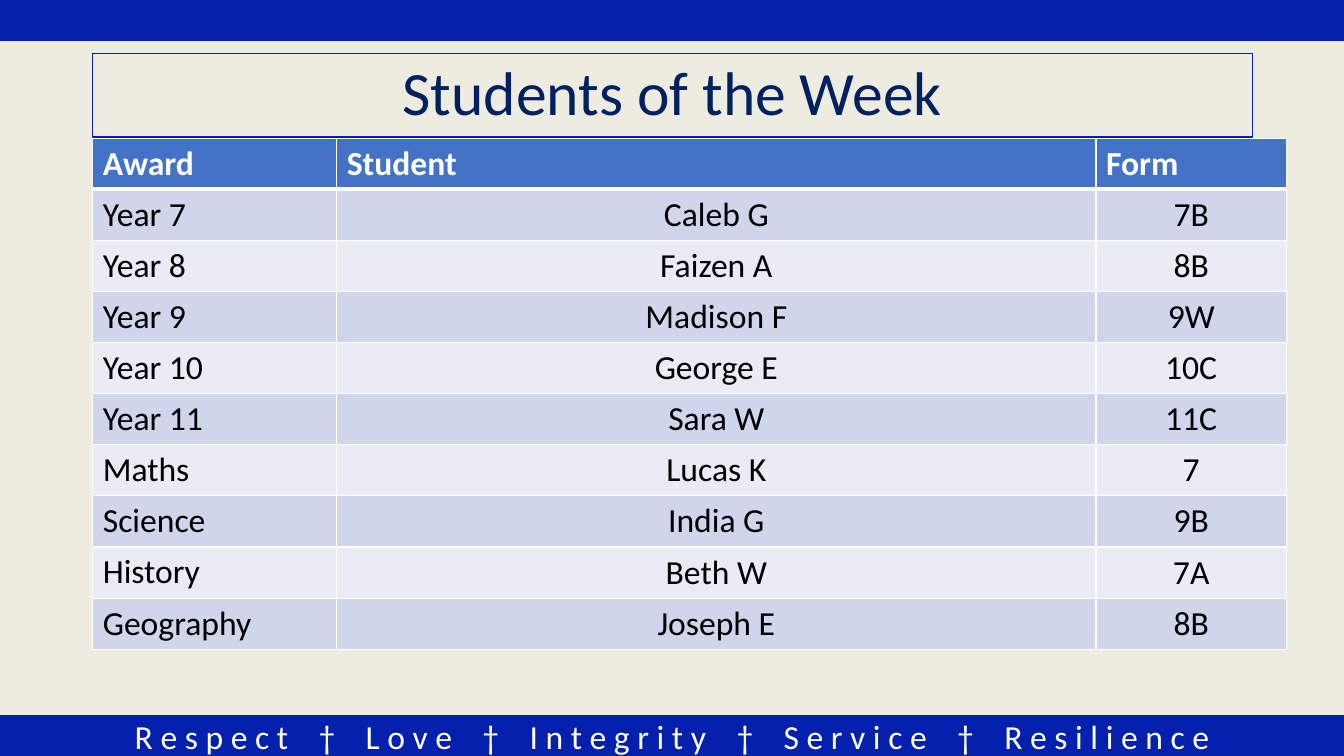
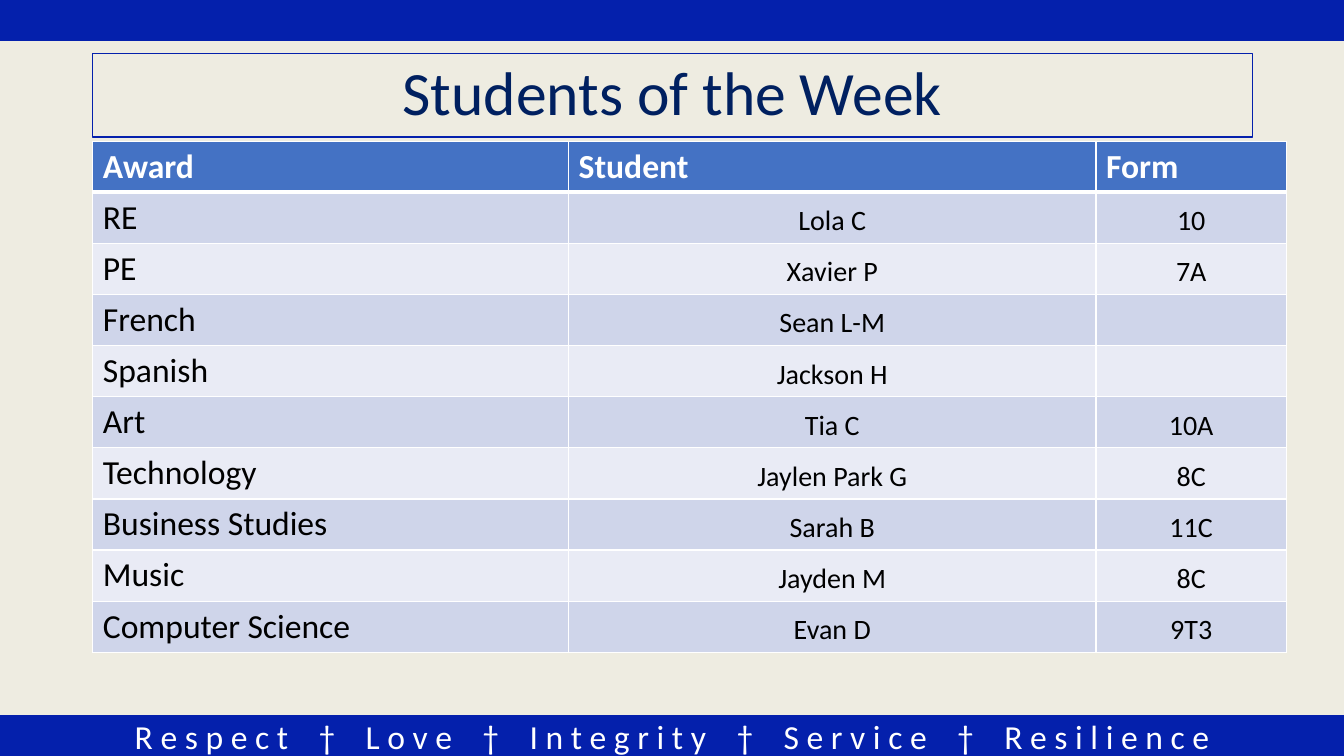
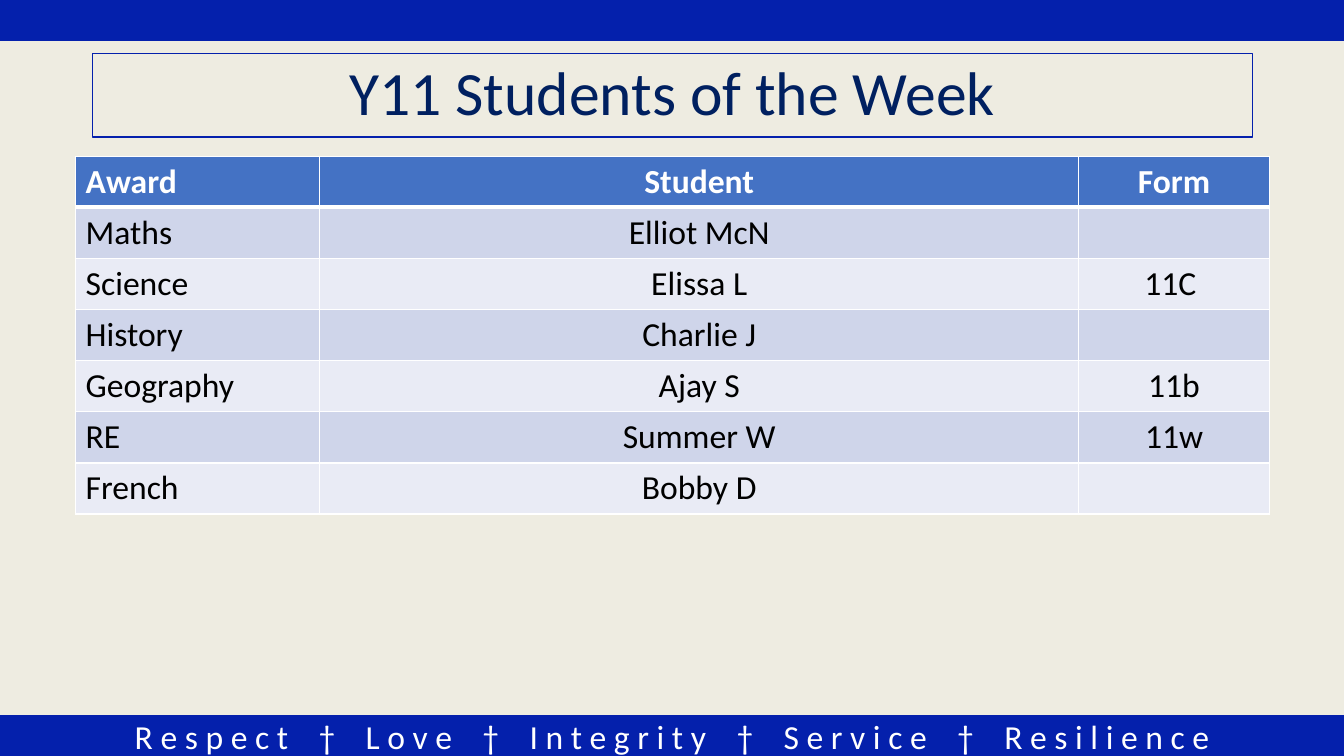
from pptx import Presentation
from pptx.dml.color import RGBColor
from pptx.enum.shapes import MSO_SHAPE
from pptx.enum.text import MSO_ANCHOR, PP_ALIGN
from pptx.oxml.ns import qn
from pptx.util import Inches, Pt
from lxml.etree import SubElement

WIDE, HIGH, BAND = 13.33, 7.5, 0.4
ROW = 0.5
BLUE, NAVY, CREAM = "0420AC", "002060", "EEECE1"
HEAD, STRIPES = "4472C4", ("E9EBF5", "CFD5EA")
WHITE, BLACK = "FFFFFF", "000000"
VALUES = ("Respect", "Love", "Integrity", "Service", "Resilience")
GAP = 16.25  # extra points on each side of a dagger

TITLE = {"size": Pt(44), "name": "Calibri"}
TEXT = {"size": Pt(24), "name": "Calibri", "bold": False}
SMALL = TEXT | {"size": Pt(20)}
BOLD = TEXT | {"bold": True}
INSET = {
    "vertical_anchor": MSO_ANCHOR.BOTTOM,
    "margin_left": Inches(0.01),
    "margin_top": Inches(0.01),
    "margin_right": Inches(0.01),
    "margin_bottom": Inches(0.05),
}

WEEK = "Students of the Week"
AWARDS = (
    ("Year 7", "Caleb G", "7B"),
    ("Year 8", "Faizen A", "8B"),
    ("Year 9", "Madison F", "9W"),
    ("Year 10", "George E", "10C"),
    ("Year 11", "Sara W", "11C"),
    ("Maths", "Lucas K", "7"),
    ("Science", "India G", "9B"),
    ("History", "Beth W", "7A"),
    ("Geography", "Joseph E", "8B"),
)
SUBJECTS = (
    ("RE", "Lola C", "10"),
    ("PE", "Xavier P", "7A"),
    ("French", "Sean L-M", ""),
    ("Spanish", "Jackson H", ""),
    ("Art", "Tia C", "10A"),
    ("Technology", "Jaylen Park G", "8C"),
    ("Business Studies", "Sarah B", "11C"),
    ("Music", "Jayden M", "8C"),
    ("Computer Science", "Evan D", "9T3"),
)
SENIORS = (
    ("Maths", "Elliot McN", ""),
    ("Science", "Elissa L", "11C "),
    ("History", "Charlie J", ""),
    ("Geography", "Ajay S", "11b"),
    ("RE", "Summer W", "11w"),
    ("French", "Bobby D", ""),
)
NARROW, EVEN = (2.42, 7.53, 1.89), (4.72, 5.23, 1.89)


def tint(color):
    return RGBColor.from_string(color)


def put(item, values):
    """Set each attribute named in values."""
    for name, value in values.items():
        setattr(item, name, value)


def paint(item, color):
    item.fill.solid()
    item.fill.fore_color.rgb = tint(color)


def write(para, text, style, color):
    run = para.add_run()
    run.text = text
    put(run.font, style)
    run.font.color.rgb = tint(color)
    return run


def box(slide, place, width, fill=None):
    """Add an outlined rectangle and return its centred paragraph."""
    shape = slide.shapes.add_shape(MSO_SHAPE.RECTANGLE, *map(Inches, place))
    shape.shadow.inherit = False
    if fill:
        paint(shape, fill)
    else:
        shape.fill.background()
    shape.line.color.rgb = tint(BLUE)
    shape.line.width = Pt(width)
    put(shape.text_frame, {"word_wrap": True, "vertical_anchor": MSO_ANCHOR.MIDDLE})
    para = shape.text_frame.paragraphs[0]
    para.alignment = PP_ALIGN.CENTER
    return para


def motto(para):
    """Write the spaced-out values with a dagger between them."""
    for index, value in enumerate(VALUES):
        for part in (" ", "†", " ") if index else ():
            run = write(para, part, TEXT, WHITE)
            if part == " ":
                run.font._element.set("spc", str(int(GAP * 100)))
        write(para, " ".join(value), TEXT, WHITE)


def frame(slide, title):
    """Add the bands, motto and title that all slides share."""
    motto(box(slide, (0, HIGH - BAND, WIDE, BAND), 1, BLUE))
    box(slide, (0, 0, WIDE, BAND), 1, BLUE)
    para = box(slide, (0.92, 0.53, 11.5, 0.83), 0.75)
    para.line_spacing = 0.9
    write(para, title, TITLE, NAVY)


def edge(cell, row):
    """Draw white borders, thicker below the header."""
    props = cell._tc.get_or_add_tcPr()
    for side in "LRTB":
        width = 3 if (row, side) in ((0, "B"), (1, "T")) else 1
        line = SubElement(props, qn("a:ln" + side), w=str(Pt(width)))
        fill = SubElement(line, qn("a:solidFill"))
        SubElement(fill, qn("a:srgbClr"), val=WHITE)


def grid(slide, left, top, cols, body, style=TEXT, center=False):
    rows = (("Award", "Student", "Form"), *body)
    size = (left, top, sum(cols), ROW * len(rows))
    table = slide.shapes.add_table(len(rows), len(cols), *map(Inches, size)).table
    for col, width in zip(table.columns, cols):
        col.width = Inches(width)
    for r, row in enumerate(rows):
        for c, text in enumerate(row):
            cell = table.cell(r, c)
            edge(cell, r)
            paint(cell, STRIPES[r % 2] if r else HEAD)
            para = cell.text_frame.paragraphs[0]
            if c and (r or center):
                para.alignment = PP_ALIGN.CENTER
            if c and r:
                put(cell, INSET)
            if text:
                look = (style if c else TEXT) if r else BOLD
                write(para, text, look, BLACK if r else WHITE)


def main():
    deck = Presentation()
    put(deck, {"slide_width": Inches(WIDE), "slide_height": Inches(HIGH)})
    paint(deck.slide_master.background, CREAM)
    pages = (
        (WEEK, (0.92, 1.37, NARROW, AWARDS)),
        (WEEK, (0.92, 1.4, EVEN, SUBJECTS, SMALL)),
        ("Y11 " + WEEK, (0.75, 1.55, NARROW, SENIORS, TEXT, True)),
    )
    for title, table in pages:
        slide = deck.slides.add_slide(deck.slide_layouts[6])
        frame(slide, title)
        grid(slide, *table)
    deck.save("out.pptx")


if __name__ == "__main__":
    main()
